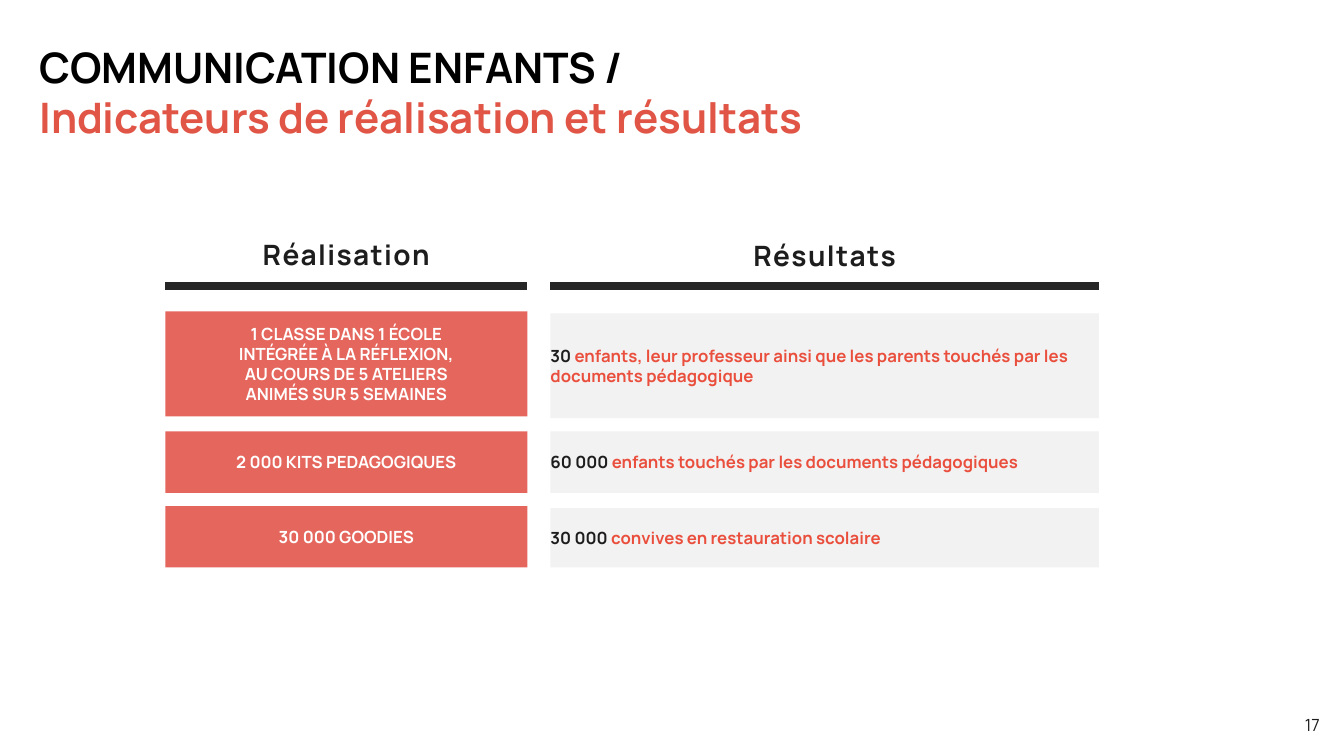
from dataclasses import dataclass

import pptx
import pptx.dml.color
import pptx.enum.shapes
import pptx.enum.text
import pptx.oxml
import pptx.oxml.ns
import pptx.presentation
import pptx.shapes.base
import pptx.slide
import pptx.text.text
import pptx.util

Align = pptx.enum.text.PP_ALIGN
Anchor = pptx.enum.text.MSO_ANCHOR
PX = 9144  # EMU per px, 100 px to the inch


@dataclass(frozen=True)
class Theme:
    font: str = "Manrope"
    black: str = "000000"
    ink: str = "1D1D1D"
    rule: str = "262626"
    white: str = "FFFFFF"
    title_red: str = "E05546"
    text_red: str = "EA4F3D"
    card_red: str = "E5665D"
    card_grey: str = "F2F2F2"
    title_size: int = 30
    heading_size: int = 20
    body_size: int = 12
    rule_width: float = 5.5


THEME = Theme()


@dataclass(frozen=True)
class Box:
    left: int
    top: int
    width: int
    height: int

    def emu(self) -> tuple[int, int, int, int]:
        return self.left * PX, self.top * PX, self.width * PX, self.height * PX


@dataclass(frozen=True)
class Column:
    heading: str
    left: int
    width: int
    heading_top: int


@dataclass(frozen=True)
class Span:
    text: str
    color: str


@dataclass(frozen=True)
class Card:
    column: Column
    top: int
    height: int
    fill: str
    align: Align
    lines: tuple[tuple[Span, ...], ...]


RULE_TOP = 284
ACTIONS = Column("Réalisation", 164, 359, 227)
RESULTS = Column("Résultats", 546, 544, 228)


def action(top: int, height: int, *lines: str) -> Card:
    spans = tuple((Span(line, THEME.white),) for line in lines)
    return Card(ACTIONS, top, height, THEME.card_red, Align.CENTER, spans)


def result(top: int, height: int, figure: str, label: str) -> Card:
    spans = (Span(figure + " ", THEME.ink), Span(label, THEME.text_red))
    return Card(RESULTS, top, height, THEME.card_grey, Align.LEFT, (spans,))


CARDS = (
    action(309, 104, "1 CLASSE DANS 1 ÉCOLE", "INTÉGRÉE À LA RÉFLEXION,",
           "AU COURS DE 5 ATELIERS", "ANIMÉS SUR 5 SEMAINES"),
    result(311, 104, "30", "enfants, leur professeur ainsi que les parents "
                           "touchés par les documents pédagogique"),
    action(428, 61, "2 000 KITS PEDAGOGIQUES"),
    result(428, 61, "60 000", "enfants touchés par les documents pédagogiques"),
    action(502, 61, "30 000 GOODIES"),
    result(504, 59, "30 000", "convives en restauration scolaire"),
)


def rgb(color: str) -> pptx.dml.color.RGBColor:
    return pptx.dml.color.RGBColor.from_string(color)


def format_font(font: pptx.text.text.Font, size: int, color: str, bold: bool = True) -> None:
    font.name = THEME.font
    font.size = pptx.util.Pt(size)
    font.bold = bold
    font.color.rgb = rgb(color)


def prepare_frame(frame: pptx.text.text.TextFrame, anchor: Anchor,
                  inset: int = 0, wrap: bool = True) -> None:
    frame.word_wrap = wrap
    frame.auto_size = pptx.enum.text.MSO_AUTO_SIZE.NONE
    frame.vertical_anchor = anchor
    frame.margin_left = frame.margin_right = inset * PX
    frame.margin_top = frame.margin_bottom = inset * PX


def add_title(slide: pptx.slide.Slide) -> None:
    title = slide.shapes.title
    title.left, title.top, title.width, title.height = Box(39, 41, 1238, 101).emu()
    frame = title.text_frame
    frame.text = "COMMUNICATION ENFANTS /\nIndicateurs de réalisation et résultats"
    prepare_frame(frame, Anchor.TOP)
    for paragraph, color in zip(frame.paragraphs, (THEME.black, THEME.title_red)):
        paragraph.alignment = Align.LEFT
        format_font(paragraph.runs[0].font, THEME.title_size, color)


def add_label(slide: pptx.slide.Slide, box: Box, text: str, size: int, align: Align,
              bold: bool, spacing: int = 0, wrap: bool = True) -> None:
    """Add one line of ink text; spacing is in hundredths of a point."""
    label = slide.shapes.add_textbox(*box.emu())
    prepare_frame(label.text_frame, Anchor.MIDDLE, 5, wrap)
    paragraph = label.text_frame.paragraphs[0]
    paragraph.text = text
    paragraph.alignment = align
    run = paragraph.runs[0]
    format_font(run.font, size, THEME.ink, bold)
    if spacing:
        run._r.get_or_add_rPr().set("spc", str(spacing))


def add_column_head(slide: pptx.slide.Slide, column: Column) -> None:
    add_label(slide, Box(column.left, column.heading_top, column.width, 50),
              column.heading, THEME.heading_size, Align.CENTER, True, spacing=100)
    rule = slide.shapes.add_connector(
        pptx.enum.shapes.MSO_CONNECTOR.STRAIGHT, column.left * PX, RULE_TOP * PX,
        (column.left + column.width) * PX, RULE_TOP * PX)
    rule.line.color.rgb = rgb(THEME.rule)
    rule.line.width = pptx.util.Pt(THEME.rule_width)
    effects = pptx.oxml.parse_xml(f"<a:effectLst {pptx.oxml.ns.nsdecls('a')}/>")
    rule._element.spPr.append(effects)


def add_card(slide: pptx.slide.Slide, card: Card) -> None:
    box = Box(card.column.left, card.top, card.column.width, card.height)
    panel = slide.shapes.add_shape(pptx.enum.shapes.MSO_SHAPE.RECTANGLE, *box.emu())
    panel.shadow.inherit = False
    panel.fill.solid()
    panel.fill.fore_color.rgb = rgb(card.fill)
    panel.line.fill.background()
    frame = panel.text_frame
    prepare_frame(frame, Anchor.MIDDLE)
    for index, line in enumerate(card.lines):
        paragraph = frame.add_paragraph() if index else frame.paragraphs[0]
        paragraph.alignment = card.align
        for span in line:
            run = paragraph.add_run()
            run.text = span.text
            format_font(run.font, THEME.body_size, span.color)


def main() -> None:
    deck = pptx.Presentation()
    deck.slide_width, deck.slide_height = 1333 * PX, 750 * PX
    slide = deck.slides.add_slide(deck.slide_layouts.get_by_name("Title Only"))
    add_title(slide)
    for column in (ACTIONS, RESULTS):
        add_column_head(slide, column)
    for card in CARDS:
        add_card(slide, card)
    add_label(slide, Box(1283, 704, 31, 30), "17", THEME.body_size,
              Align.RIGHT, False, wrap=False)
    deck.save("out.pptx")


if __name__ == "__main__":
    main()
